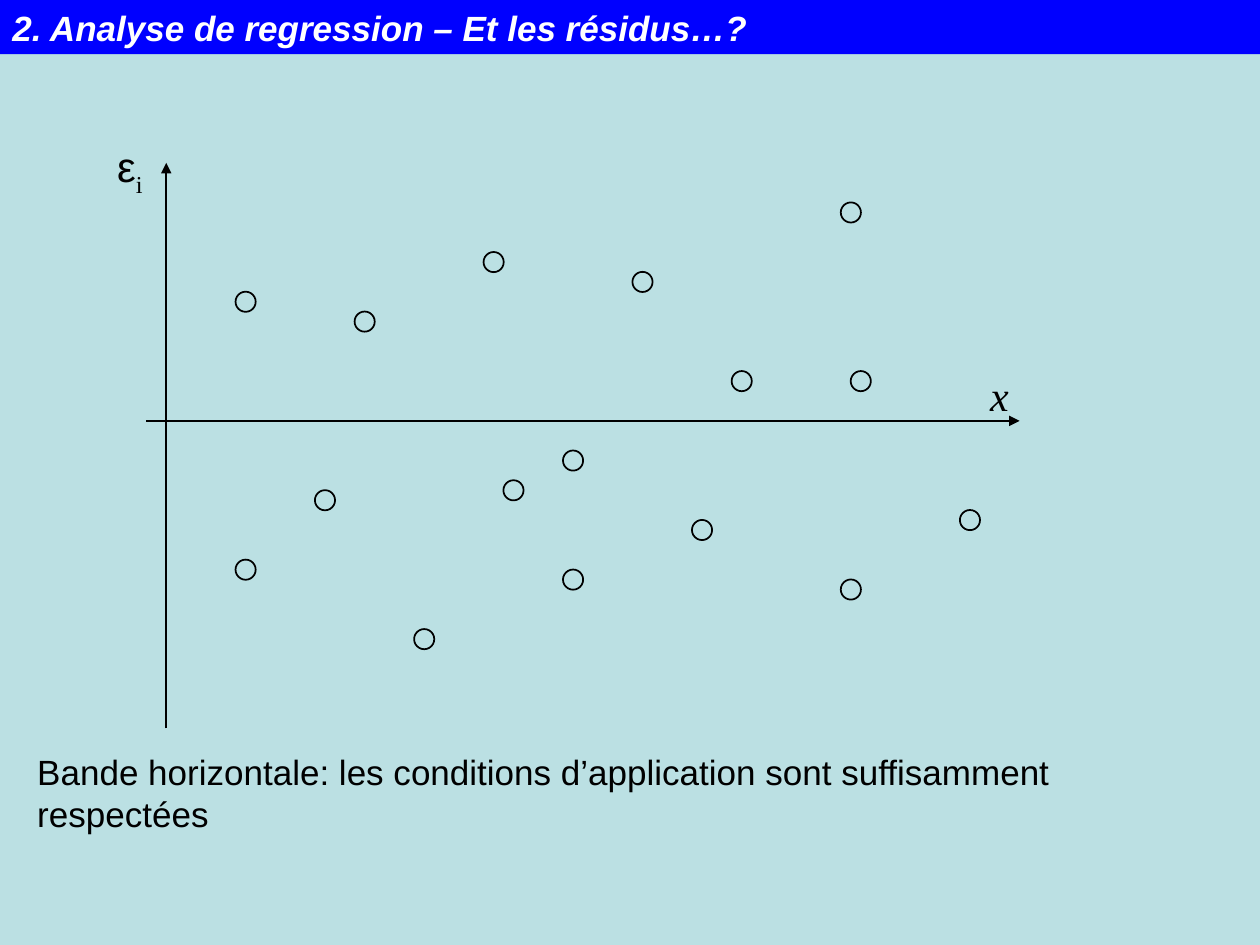
from dataclasses import dataclass, field

from lxml.etree import SubElement
from pptx import Presentation
from pptx.dml.color import RGBColor
from pptx.enum.shapes import MSO_CONNECTOR as Connector, MSO_SHAPE as Shape
from pptx.enum.text import MSO_ANCHOR as Anchor, PP_ALIGN as Align
from pptx.oxml.ns import qn
from pptx.util import Pt

COLORS = {"background": "BBE0E3", "ink": "000000", "banner": "0000FF", "title": "FFFFFF"}

# Plot grid: origin of the axes and length of one step
ORIGIN_X, ORIGIN_Y = 95, 240.5
STEP = 5.67
DIAMETER = 11.5


@dataclass
class Run:
    text: str
    font: dict
    color: str = "ink"
    baseline: int = 0


@dataclass
class Label:
    left: float
    top: float
    width: float
    height: float
    runs: list[Run] = field(default_factory=list)
    wrap: bool = False


@dataclass
class Axis:
    start: tuple[int, int]
    end: tuple[int, int]


ARIAL = {"name": "Arial", "size": Pt(20)}
SYMBOL = {"name": "Arial", "size": Pt(24)}
TIMES = {"name": "Times New Roman", "size": Pt(24)}

AXES = [Axis((0, -31), (0, 26)), Axis((-2, 0), (86, 0))]

# Residuals as grid steps from the origin, upwards positive
RESIDUALS = [
    (8, -15), (8, 12), (16, -8), (20, 10), (26, -22), (33, 16), (35, -7), (48, 14),
    (41, -4), (54, -11), (69, 21), (70, 4), (81, -10), (69, -17), (41, -16), (58, 4),
]

LABELS = [
    Label(59.8, 77, 29.5, 36, [Run("ε", SYMBOL), Run("i", TIMES, baseline=-25000)]),
    Label(558.7, 207.4, 25.2, 36, [Run("x", TIMES | {"italic": True})]),
    Label(14.2, 425.5, 690, 31, [Run(
        "Bande horizontale: les conditions d’application sont suffisamment respectées",
        ARIAL)], wrap=True),
]
TITLE = Run("2. Analyse de regression – Et les résidus…?",
            ARIAL | {"bold": True, "italic": True}, "title")


def rgb(name: str) -> RGBColor:
    return RGBColor.from_string(COLORS[name])


def grid_point(column: float, row: float) -> tuple[float, float]:
    return ORIGIN_X + column * STEP, ORIGIN_Y - row * STEP


def write_runs(text_frame, runs: list[Run], wrap: bool) -> None:
    text_frame.word_wrap = wrap
    text_frame.vertical_anchor = Anchor.TOP
    paragraph = text_frame.paragraphs[0]
    paragraph.alignment = Align.LEFT
    for item in runs:
        run = paragraph.add_run()
        run.text = item.text
        for name, value in item.font.items():
            setattr(run.font, name, value)
        run.font.color.rgb = rgb(item.color)
        if item.baseline:
            run.font._element.set("baseline", str(item.baseline))


def draw_axis(slide, axis: Axis) -> None:
    ends = [Pt(value) for end in (axis.start, axis.end) for value in grid_point(*end)]
    connector = slide.shapes.add_connector(Connector.STRAIGHT, *ends)
    connector.line.width = Pt(1)
    connector.line.color.rgb = rgb("ink")
    SubElement(connector.line._get_or_add_ln(), qn("a:tailEnd"), type="triangle")
    SubElement(connector._element.spPr, qn("a:effectLst"))


def draw_residual(slide, column: int, row: int) -> None:
    x, y = grid_point(column, row)
    shape = slide.shapes.add_shape(
        Shape.OVAL, Pt(x - DIAMETER / 2), Pt(y - DIAMETER / 2), Pt(DIAMETER), Pt(DIAMETER))
    shape.shadow.inherit = False
    shape.fill.solid()
    shape.fill.fore_color.rgb = rgb("background")
    shape.line.color.rgb = rgb("ink")
    shape.line.width = Pt(1)


def draw_label(slide, label: Label) -> None:
    box = slide.shapes.add_textbox(
        Pt(label.left), Pt(label.top), Pt(label.width), Pt(label.height))
    write_runs(box.text_frame, label.runs, label.wrap)


def draw_banner(slide, title: Run) -> None:
    banner = slide.shapes.add_shape(Shape.RECTANGLE, Pt(0), Pt(0), Pt(720), Pt(31))
    banner.shadow.inherit = False
    banner.fill.solid()
    banner.fill.fore_color.rgb = rgb("banner")
    banner.line.fill.background()
    write_runs(banner.text_frame, [title], wrap=True)


def main() -> None:
    presentation = Presentation()
    presentation.slide_width, presentation.slide_height = Pt(720), Pt(540)
    slide = presentation.slides.add_slide(presentation.slide_layouts[6])
    slide.background.fill.solid()
    slide.background.fill.fore_color.rgb = rgb("background")

    # Residual plot
    for axis in AXES:
        draw_axis(slide, axis)
    for column, row in RESIDUALS:
        draw_residual(slide, column, row)

    # Axis names, conclusion and title
    for label in LABELS:
        draw_label(slide, label)
    draw_banner(slide, TITLE)

    presentation.save("out.pptx")


if __name__ == "__main__":
    main()
